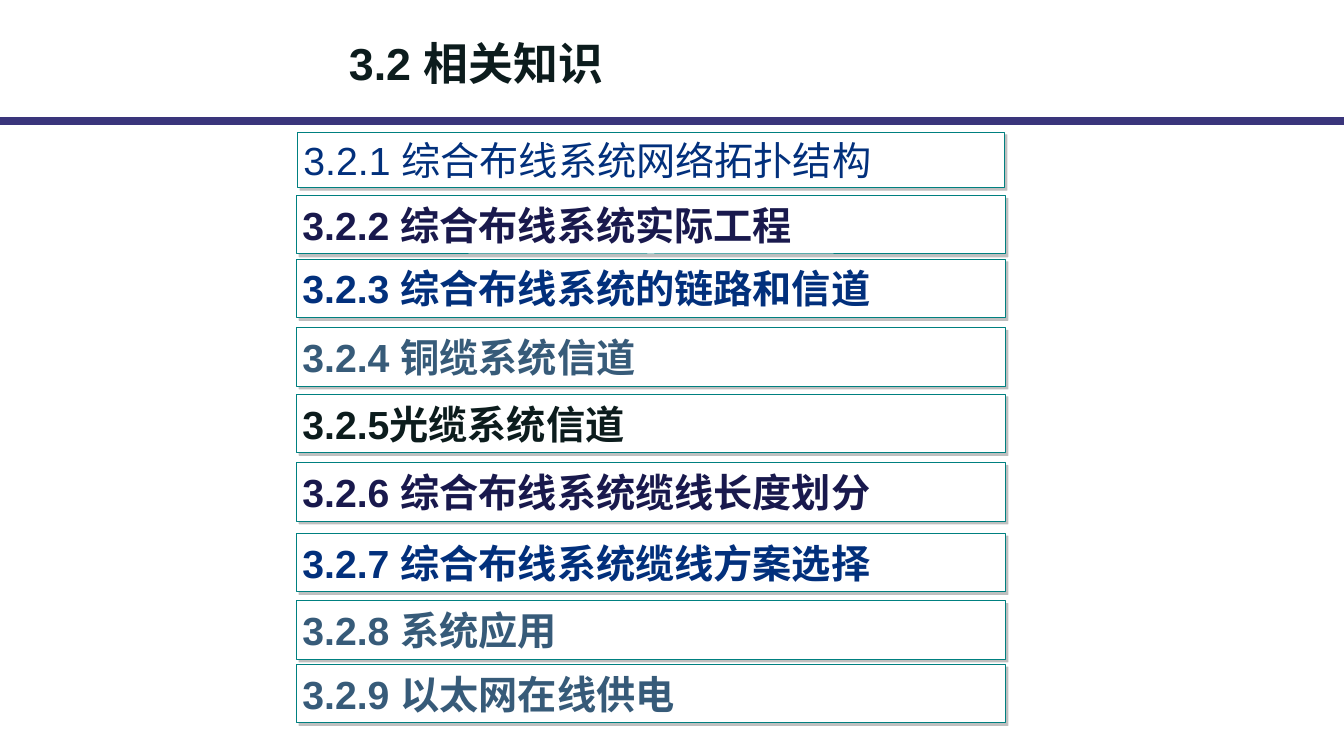
import pptx
import pptx.dml.color
import pptx.enum.shapes
import pptx.enum.text
import pptx.oxml
import pptx.oxml.ns
import pptx.util
from pptx.util import Inches, Pt

TITLE = "3.2 相关知识"
BLACK, NAVY, BLUE, SLATE = "0C1C1D", "19194D", "02307C", "375B79"

# text, colour, bold, (left, top, width, height) in inches
LEFT, WIDTH, HEIGHT = 2.94, 7.03, 0.58
SECTIONS = [
    ("3.2.1 综合布线系统网络拓扑结构", BLUE, False, (2.95, 1.31, 7.01, 0.55)),
    ("3.2.2 综合布线系统实际工程", NAVY, True, (LEFT, 1.94, WIDTH, HEIGHT)),
    ("3.2.3 综合布线系统的链路和信道", BLUE, True, (LEFT, 2.57, WIDTH, HEIGHT)),
    ("3.2.4 铜缆系统信道", SLATE, True, (LEFT, 3.25, WIDTH, HEIGHT)),
    ("3.2.5光缆系统信道", BLACK, True, (LEFT, 3.91, WIDTH, HEIGHT)),
    ("3.2.6 综合布线系统缆线长度划分", NAVY, True, (LEFT, 4.59, WIDTH, HEIGHT)),
    ("3.2.7 综合布线系统缆线方案选择", BLUE, True, (LEFT, 5.29, WIDTH, HEIGHT)),
    ("3.2.8 系统应用", SLATE, True, (LEFT, 5.96, WIDTH, HEIGHT)),
    ("3.2.9 以太网在线供电", SLATE, True, (LEFT, 6.59, WIDTH, HEIGHT)),
]
SHADOW = (
    f'<a:effectLst {pptx.oxml.ns.nsdecls("a")}>'
    '<a:outerShdw dist="35921" dir="2700000" algn="ctr" rotWithShape="0">'
    '<a:srgbClr val="808080"><a:alpha val="50000"/></a:srgbClr>'
    '</a:outerShdw></a:effectLst>'
)
NO_EFFECT = f'<a:effectLst {pptx.oxml.ns.nsdecls("a")}/>'


def rgb(value):
    return pptx.dml.color.RGBColor.from_string(value)


def set_all(target, values):
    for name, value in values.items():
        setattr(target, name, value)


def write(shape, text, size, color, bold, anchor, margins):
    """Fill a shape with one left-aligned paragraph."""
    frame = shape.text_frame
    horizontal, vertical = (Inches(margin) for margin in margins)
    set_all(frame, {
        "word_wrap": True,
        "auto_size": pptx.enum.text.MSO_AUTO_SIZE.NONE,
        "vertical_anchor": anchor,
        "margin_left": horizontal, "margin_right": horizontal,
        "margin_top": vertical, "margin_bottom": vertical,
    })
    paragraph = frame.paragraphs[0]
    paragraph.alignment = pptx.enum.text.PP_ALIGN.LEFT
    run = paragraph.add_run()
    run.text = text
    set_all(run.font, {"name": "Arial", "size": Pt(size), "bold": bold})
    run.font.color.rgb = rgb(color)
    return paragraph


def add_rule(slide):
    rule = slide.shapes.add_connector(
        pptx.enum.shapes.MSO_CONNECTOR.STRAIGHT,
        Inches(13.33), Inches(1.2), 0, Inches(1.2))
    rule.line.color.rgb = rgb("3A357B")
    rule.line.width = Pt(5.75)
    rule._element.spPr.append(pptx.oxml.parse_xml(NO_EFFECT))


def add_title(slide):
    title = slide.shapes.title
    set_all(title, {"left": Inches(3.36), "top": Inches(0.28),
                    "width": Inches(6.9), "height": Inches(0.63)})
    paragraph = write(title, TITLE, 32, BLACK, True,
                      pptx.enum.text.MSO_ANCHOR.TOP, (0.1, 0.05))
    paragraph.line_spacing = 1.05


def add_section(slide, text, color, bold, place):
    box = slide.shapes.add_shape(pptx.enum.shapes.MSO_SHAPE.RECTANGLE,
                                 *(Inches(length) for length in place))
    box.fill.solid()
    box.fill.fore_color.rgb = rgb("FFFFFF")
    box.line.color.rgb = rgb("008080")
    box.line.width = Pt(0.75)
    box._element.spPr.append(pptx.oxml.parse_xml(SHADOW))
    write(box, text, 28, color, bold,
          pptx.enum.text.MSO_ANCHOR.MIDDLE, (0.06, 0.01))


def main():
    presentation = pptx.Presentation()
    set_all(presentation, {"slide_width": Inches(13.33),
                           "slide_height": Inches(7.5)})
    slide = presentation.slides.add_slide(presentation.slide_layouts[5])
    add_rule(slide)
    add_title(slide)
    for section in SECTIONS:
        add_section(slide, *section)
    presentation.save("out.pptx")


if __name__ == "__main__":
    main()
